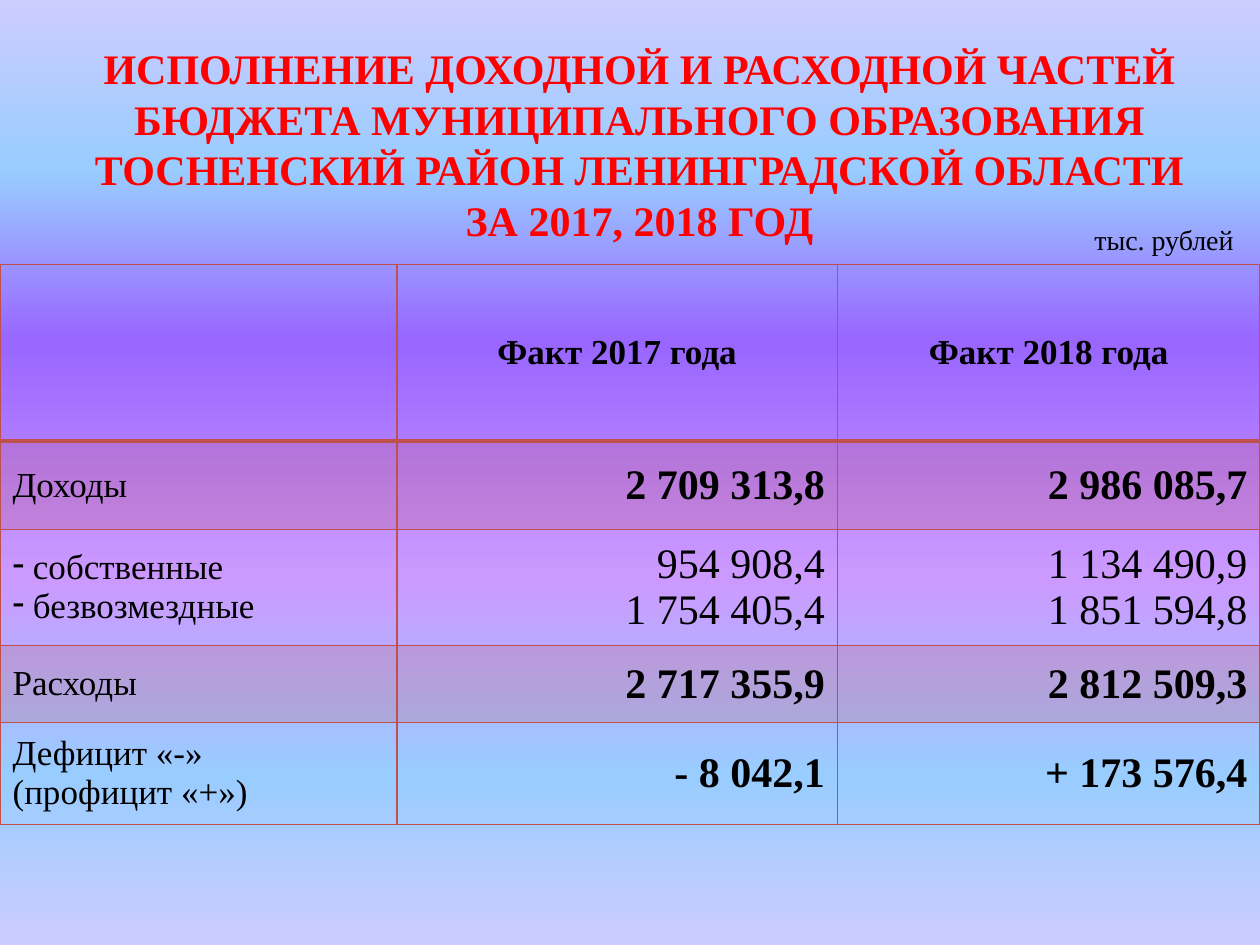
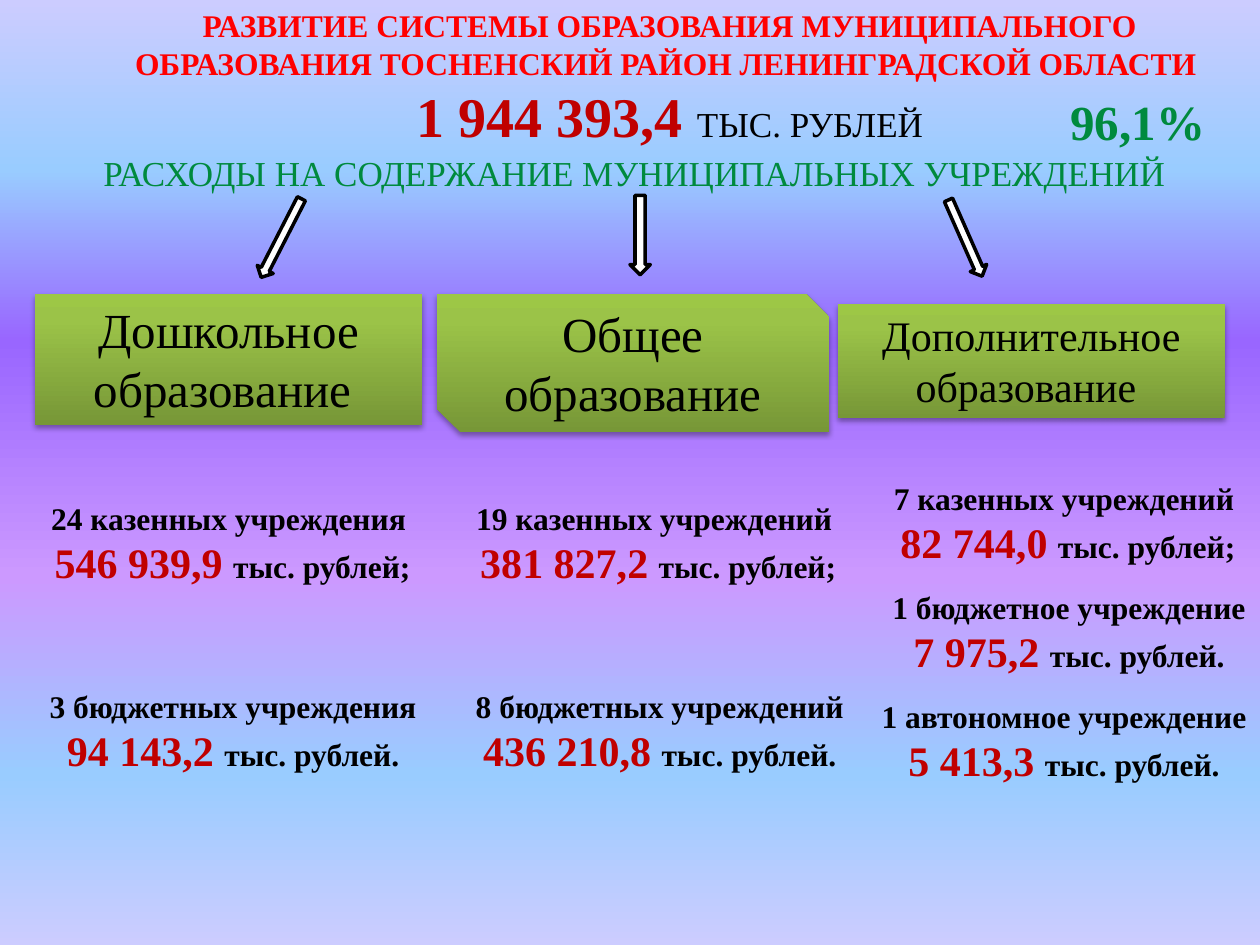
from dataclasses import dataclass

import pptx
import pptx.dml.color
import pptx.enum.shapes
import pptx.enum.text
import pptx.oxml
import pptx.oxml.ns
import pptx.util

Cm, Pt = pptx.util.Cm, pptx.util.Pt
Align, Anchor = pptx.enum.text.PP_ALIGN, pptx.enum.text.MSO_ANCHOR
AutoSize = pptx.enum.text.MSO_AUTO_SIZE
Shapes = pptx.enum.shapes.MSO_SHAPE
qn = pptx.oxml.ns.qn


@dataclass(frozen=True)
class Theme:
    font: str = "Times New Roman"
    black: str = "000000"
    white: str = "FFFFFF"
    title: str = "FF0000"
    amount: str = "C00000"
    green: str = "008A3E"
    table: str = "C0504D"
    purple_edge: str = "5E457C"
    green_edge: str = "4F6228"
    small: int = 16
    body: int = 18
    label: int = 20
    number: int = 24
    heading: int = 28
    total: int = 32
    background: tuple = ((0, "CCCCFF"), (18, "99CCFF"), (36, "9966FF"),
                         (61, "CC99FF"), (82, "99CCFF"), (100, "CCCCFF"))
    box: tuple = ((0, "779737"), (80, "9BC348"), (100, "9DC746"))


THEME = Theme()


# --- Formatting helpers ---
def rgb(value):
    return pptx.dml.color.RGBColor.from_string(value)


def xml(tag, content="", attributes=""):
    return pptx.oxml.parse_xml(
        f'<a:{tag} xmlns:a="http://schemas.openxmlformats.org/drawingml/2006/main" '
        f"{attributes}>{content}</a:{tag}>")


def solid(color):
    return f'<a:solidFill><a:srgbClr val="{color}"/></a:solidFill>'


def apply(target, formats):
    for name, value in formats.items():
        setattr(target, name, value)


def set_gradient(fill, stops, angle):
    fill.gradient()
    gradient = fill._fill._gradFill
    for child in list(gradient):
        gradient.remove(child)
    colors = "".join(f'<a:gs pos="{position * 1000}"><a:srgbClr val="{color}"/></a:gs>'
                     for position, color in stops)
    gradient.append(xml("gsLst", colors))
    gradient.append(xml("lin", attributes=f'ang="{angle * 60000}" scaled="0"'))


def text(content, size, color=THEME.black, bold=False, outline=None, width=0.71):
    """Describe one run of text."""
    return content, dict(size=Pt(size), bold=bold, name=THEME.font), color, outline, width


def write(frame, paragraphs, align=Align.CENTER, bullet=None):
    for index, runs in enumerate(paragraphs):
        paragraph = frame.add_paragraph() if index else frame.paragraphs[0]
        paragraph.alignment = align
        if bullet:
            properties = paragraph._p.get_or_add_pPr()
            apply_indent = {"marL": "0", "indent": "0"}
            for name, value in apply_indent.items():
                properties.set(name, value)
            properties.append(xml("buFontTx"))
            properties.append(xml("buChar", attributes=f'char="{bullet}"'))
        for content, formats, color, outline, width in runs:
            run = paragraph.add_run()
            run.text = content
            apply(run.font, formats)
            run.font.color.rgb = rgb(color)
            if outline:
                run._r.get_or_add_rPr().insert(
                    0, xml("ln", solid(outline), f'w="{Pt(width)}"'))


# --- Elements ---
def add_slide(presentation):
    slide = presentation.slides.add_slide(presentation.slide_layouts[6])
    set_gradient(slide.background.fill, THEME.background, 90)
    return slide


def add_text(slide, position, paragraphs, align=Align.CENTER, wrap=True):
    frame = slide.shapes.add_textbox(*map(Cm, position)).text_frame
    apply(frame, dict(word_wrap=wrap, auto_size=AutoSize.SHAPE_TO_FIT_TEXT))
    write(frame, paragraphs, align)


def add_arrow(slide, position, rotation):
    arrow = slide.shapes.add_shape(Shapes.DOWN_ARROW, *map(Cm, position))
    arrow.rotation = rotation
    arrow.shadow.inherit = False
    arrow.fill.solid()
    arrow.fill.fore_color.rgb = rgb(THEME.white)
    arrow.line.color.rgb = rgb(THEME.black)
    arrow.line.width = Pt(2)


def add_box(slide, kind, position, content, size, anchor=Anchor.TOP):
    box = slide.shapes.add_shape(kind, *map(Cm, position))
    set_gradient(box.fill, THEME.box, 270)
    box.line.fill.background()
    box.shadow.inherit = False
    shadow = ('<a:outerShdw blurRad="40000" dist="23000" dir="5400000" rotWithShape="0">'
              '<a:srgbClr val="000000"><a:alpha val="35000"/></a:srgbClr></a:outerShdw>')
    properties = box._element.spPr
    properties.replace(properties.find(qn("a:effectLst")), xml("effectLst", shadow))
    auto_size = AutoSize.SHAPE_TO_FIT_TEXT if anchor == Anchor.TOP else AutoSize.NONE
    apply(box.text_frame, dict(word_wrap=True, vertical_anchor=anchor, auto_size=auto_size))
    write(box.text_frame, [[text(content, size)]])


def format_cell(cell, is_header, is_shaded):
    cell.vertical_anchor = Anchor.MIDDLE
    properties = cell._tc.get_or_add_tcPr()
    if is_shaded:
        cell.fill.solid()
        cell.fill.fore_color.rgb = rgb(THEME.table)
        properties.find(".//" + qn("a:srgbClr")).append(xml("alpha", attributes='val="20000"'))
    else:
        cell.fill.background()
    for index, side in enumerate("LRTB"):
        width = 2 if is_header and side == "B" else 1
        properties.insert(index, xml("ln" + side, solid(THEME.table), f'w="{Pt(width)}"'))


def add_budget_table(slide, position, widths, heights, header, rows):
    table = slide.shapes.add_table(
        len(heights), len(widths), *map(Cm, position), Cm(sum(widths)), Cm(sum(heights))).table
    apply(table, dict(first_row=False, horz_banding=False))
    for column, width in zip(table.columns, widths):
        column.width = Cm(width)
    for row, height in zip(table.rows, heights):
        row.height = Cm(height)
    for row_index in range(len(heights)):
        for column_index in range(len(widths)):
            format_cell(table.cell(row_index, column_index), row_index == 0, row_index in (1, 3))
    for column_index, caption in enumerate(header, start=1):
        write(table.cell(0, column_index).text_frame, [[text(caption, THEME.label, bold=True)]])
    for row_index, (labels, *values, formats) in enumerate(rows, start=1):
        write(table.cell(row_index, 0).text_frame,
              [[text(label, THEME.label)] for label in labels],
              Align.LEFT, "-" if len(values[0]) > 1 else None)
        for column_index, lines in enumerate(values, start=1):
            write(table.cell(row_index, column_index).text_frame,
                  [[text(line, THEME.number, **formats)] for line in lines], Align.RIGHT)


def add_funding(slide, left, top, width, institutions, amount, ending=".", wrap=True):
    """Number of institutions above the money they received."""
    lead = [text(" ", THEME.body, bold=True)] if ending == ";" else []
    add_text(slide, (left, top, width, 2.06), [
        [text(institutions, THEME.body, bold=True)],
        lead + [text(amount + " ", THEME.number, THEME.amount, True, THEME.amount, 0.75),
                text("тыс. рублей" + ending, THEME.body, bold=True)]], wrap=wrap)


# --- Slides ---
def build_budget_slide(presentation):
    slide = add_slide(presentation)
    bold = dict(bold=True)
    add_budget_table(
        slide, (0, 5.33), (8, 8.88, 8.52), (3.56, 1.78, 2.34, 1.55, 2.06),
        ("Факт 2017 года", "Факт 2018 года"),
        [(["Доходы"], ["2 709 313,8"], ["2 986 085,7"], bold),
         ([" собственные", " безвозмездные"], ["954 908,4", "1 754 405,4"],
          ["1 134 490,9", "1 851 594,8"], {}),
         (["Расходы"], ["2 717 355,9"], ["2 812 509,3"], bold),
         (["Дефицит «-»", "(профицит «+»)"], ["- 8 042,1"], ["+ 173 576,4"],
          dict(bold=True, outline=THEME.purple_edge))])
    title = ("ИСПОЛНЕНИЕ ДОХОДНОЙ И РАСХОДНОЙ ЧАСТЕЙ",
             "БЮДЖЕТА МУНИЦИПАЛЬНОГО ОБРАЗОВАНИЯ ТОСНЕНСКИЙ РАЙОН ЛЕНИНГРАДСКОЙ ОБЛАСТИ",
             "ЗА 2017, 2018 ГОД")
    add_text(slide, (0.89, 0.74, 24, 4.37),
             [[text(line, THEME.number, THEME.title, True, THEME.purple_edge)] for line in title])
    add_text(slide, (20.45, 4.37, 4.67, 0.94), [[text("тыс. рублей", THEME.small)]], Align.RIGHT)


def build_education_slide(presentation):
    slide = add_slide(presentation)

    # Heading and totals
    add_text(slide, (0.79, 2.92, 24, 1.12),
             [[text("РАСХОДЫ НА СОДЕРЖАНИЕ МУНИЦИПАЛЬНЫХ УЧРЕЖДЕНИЙ",
                    THEME.label, THEME.green, outline=THEME.black)]])
    add_text(slide, (1.91, 0, 23.19, 3.18), [
        [text("РАЗВИТИЕ СИСТЕМЫ ОБРАЗОВАНИЯ МУНИЦИПАЛЬНОГО ОБРАЗОВАНИЯ "
              "ТОСНЕНСКИЙ РАЙОН ЛЕНИНГРАДСКОЙ ОБЛАСТИ ",
              THEME.body, THEME.title, True, THEME.black)],
        [text("1 944 393,4 ", THEME.total, THEME.amount, True, THEME.amount),
         text("ТЫС. РУБЛЕЙ", THEME.label, outline=THEME.black)]])
    add_text(slide, (21.31, 1.73, 3.25, 1.45),
             [[text("96,1%", THEME.heading, THEME.green, True, THEME.green_edge)]], wrap=False)

    # Arrows to the kinds of education
    for position, rotation in (((5.49, 3.91, 0.36, 1.78), 27.1),
                               ((12.7, 3.94, 0.41, 1.6), 0),
                               ((19.28, 3.96, 0.36, 1.68), 336.2)):
        add_arrow(slide, position, rotation)

    # Kinds of education
    add_box(slide, Shapes.RECTANGLE, (0.71, 5.92, 7.8, 2.64),
            "Дошкольное образование ", THEME.heading)
    add_box(slide, Shapes.SNIP_2_DIAG_RECTANGLE, (8.81, 5.92, 7.9, 2.79),
            "Общее образование", THEME.heading, Anchor.MIDDLE)
    add_box(slide, Shapes.RECTANGLE, (16.89, 6.12, 7.8, 2.31),
            "Дополнительное образование ", THEME.number)

    # Funding by type of institution
    upper, lower = 9.93, 13.72
    add_funding(slide, 0.51, upper, 8.2, "24 казенных учреждения", "546 939,9", ";")
    add_funding(slide, 0.71, lower, 7.98, "3 бюджетных учреждения", "94 143,2", wrap=False)
    add_funding(slide, 9.09, upper, 8.2, "19 казенных учреждений", "381 827,2", ";")
    add_funding(slide, 9.3, lower, 8, "8 бюджетных учреждений", "436 210,8", wrap=False)
    add_funding(slide, 17.5, 9.53, 7.9, "7 казенных учреждений", "82 744,0", ";")
    add_funding(slide, 17.7, 11.73, 7.7, "1 бюджетное учреждение", "7 975,2")
    add_funding(slide, 17.5, 13.92, 7.9, "1 автономное учреждение", "5 413,3")


def main():
    presentation = pptx.Presentation()
    apply(presentation, dict(slide_width=Cm(25.4), slide_height=Cm(19.05)))
    build_budget_slide(presentation)
    build_education_slide(presentation)
    presentation.save("out.pptx")


if __name__ == "__main__":
    main()
